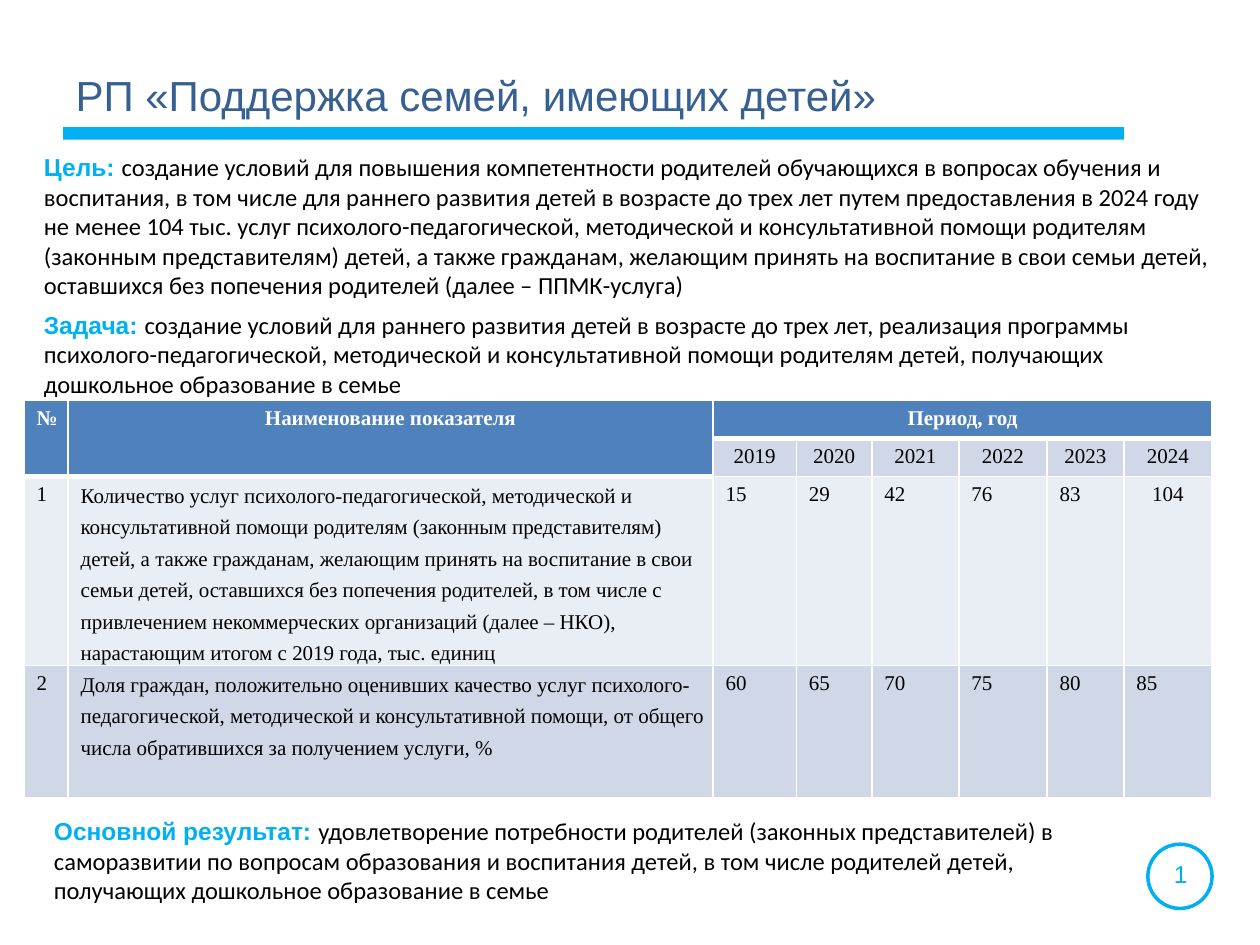
from collections import namedtuple
from dataclasses import dataclass

from pptx import Presentation
from pptx.dml.color import RGBColor as RGB
from pptx.enum.shapes import MSO_SHAPE as Shape
from pptx.enum.text import MSO_ANCHOR as Anchor, MSO_AUTO_SIZE as AutoSize, PP_ALIGN as Align
from pptx.oxml.ns import qn
from pptx.util import Pt
from lxml.etree import SubElement

PX = 9144  # 100 px to the inch
Box = namedtuple("Box", "x y w h")


@dataclass(frozen=True)
class Theme:
    accent: str = "00B0F0"
    title: str = "376092"
    text: str = "000000"
    white: str = "FFFFFF"
    header: str = "4F81BD"
    band_dark: str = "D0D8E8"
    band_light: str = "E9EDF4"
    sans: str = "Arial"
    body: str = "Calibri"
    serif: str = "Times New Roman"
    title_size: int = 24
    text_size: int = 14
    table_size: int = 12


THEME = Theme()

STATEMENTS = [
    (Box(25, 116, 945, 128), "Цель: ",
     "создание условий для повышения компетентности родителей обучающихся в вопросах обучения и "
     "воспитания, в том числе для раннего развития детей в возрасте до трех лет путем предоставления "
     "в 2024 году не менее 104 тыс. услуг психолого-педагогической, методической и консультативной "
     "помощи родителям (законным представителям) детей, а также гражданам, желающим принять на "
     "воспитание в свои семьи детей, оставшихся без попечения родителей (далее – ППМК-услуга)"),
    (Box(25, 241, 957, 81), "Задача: ",
     "создание условий для раннего развития детей в возрасте до трех лет, реализация программы "
     "психолого-педагогической, методической и консультативной помощи родителям детей, получающих "
     "дошкольное образование в семье"),
    (Box(33, 643, 863, 81), "Основной результат: ",
     "удовлетворение потребности родителей (законных представителей) в саморазвитии по вопросам "
     "образования и воспитания детей, в том числе родителей детей, получающих дошкольное "
     "образование в семье"),
]

COLUMNS = [35, 512, 66, 60, 69, 70, 61, 70]
ROWS = [29, 29, 144, 105]
INDICATORS = [
    ["№", "Наименование показателя", "Период, год", "", "", "", "", ""],
    ["", "", "2019", "2020", "2021", "2022", "2023", "2024"],
    ["1",
     "Количество услуг психолого-педагогической, методической и консультативной помощи родителям "
     "(законным представителям) детей, а также гражданам, желающим принять на воспитание в свои "
     "семьи детей, оставшихся без попечения родителей, в том числе с привлечением некоммерческих "
     "организаций (далее – НКО), нарастающим итогом с 2019 года, тыс. единиц",
     "15", "29", "42", "76", "83", "104"],
    ["2",
     "Доля граждан, положительно оценивших качество услуг психолого-педагогической, методической и "
     "консультативной помощи, от общего числа обратившихся за получением услуги, %",
     "60", "65", "70", "75", "80", "85"],
]


def emu(box):
    return [side * PX for side in box]


def set_font(font, name, size, color, bold=False):
    font.name, font.size, font.bold = name, Pt(size), bold
    font.color.rgb = RGB.from_string(color)


def add_title(slide, box, text):
    title = slide.shapes.title
    title.left, title.top, title.width, title.height = emu(box)
    frame = title.text_frame
    frame.auto_size = AutoSize.NONE
    frame.vertical_anchor = Anchor.MIDDLE
    frame.text = text
    heading = frame.paragraphs[0]
    heading.alignment = Align.LEFT
    set_font(heading.font, THEME.sans, THEME.title_size, THEME.title)


def add_rule(slide, box):
    rule = slide.shapes.add_shape(Shape.RECTANGLE, *emu(box))
    rule.shadow.inherit = False
    rule.fill.solid()
    rule.fill.fore_color.rgb = RGB.from_string(THEME.accent)
    rule.line.fill.background()


def add_page_badge(slide, box, number):
    ring = slide.shapes.add_shape(Shape.OVAL, *emu(box))
    ring.shadow.inherit = False
    ring.fill.background()
    ring.line.color.rgb = RGB.from_string(THEME.accent)
    ring.line.width = Pt(2)
    # The number's box is a little wider than the ring
    label = Box(box.x - 3, box.y + 7, box.w + 7, 34)
    frame = slide.shapes.add_textbox(*emu(label)).text_frame
    frame.word_wrap = True
    frame.text = number
    page = frame.paragraphs[0]
    page.alignment = Align.CENTER
    set_font(page.font, THEME.sans, THEME.text_size, THEME.accent)


def add_statement(slide, box, lead, text):
    frame = slide.shapes.add_textbox(*emu(box)).text_frame
    frame.word_wrap = True
    statement = frame.paragraphs[0]
    for words, name, color, bold in ((lead, THEME.sans, THEME.accent, True),
                                     (text, THEME.body, THEME.text, False)):
        run = statement.add_run()
        run.text = words
        set_font(run.font, name, THEME.text_size, color, bold)


def set_borders(cell, top, bottom):
    props = cell._tc.get_or_add_tcPr()
    for tag, points in (("a:lnL", 1), ("a:lnR", 1), ("a:lnT", top), ("a:lnB", bottom)):
        border = SubElement(props, qn(tag), w=str(Pt(points)))
        fill = SubElement(border, qn("a:solidFill"))
        SubElement(fill, qn("a:srgbClr"), val=THEME.white)


def style_cell(cell, text, row, col):
    header = row == 0 or (row == 1 and col < 2)
    below_header = (row == 1 and col >= 2) or (row == 2 and col < 2)
    set_borders(cell, 3 if below_header else 1, 3 if header else 1)
    cell.fill.solid()
    band = THEME.header if header else THEME.band_light if row == 2 else THEME.band_dark
    cell.fill.fore_color.rgb = RGB.from_string(band)

    cell.text = text
    entry = cell.text_frame.paragraphs[0]
    if row < 2 or text == "104":
        entry.alignment = Align.CENTER
    elif col == 1:
        cell.margin_left = cell.margin_right = 2 * PX
        cell.margin_top = cell.margin_bottom = 0
        entry.line_spacing = Pt(18)
        entry._p.get_or_add_pPr().set("marL", str(8 * PX))
    set_font(entry.font, THEME.serif, THEME.table_size,
             THEME.white if header else THEME.text, header)


def add_indicators(slide, box):
    table = slide.shapes.add_table(len(ROWS), len(COLUMNS), *emu(box)).table
    for column, width in zip(table.columns, COLUMNS):
        column.width = width * PX
    for line, height in zip(table.rows, ROWS):
        line.height = height * PX
    for row, texts in enumerate(INDICATORS):
        for col, text in enumerate(texts):
            style_cell(table.cell(row, col), text, row, col)
    # Header spans
    for col in (0, 1):
        table.cell(0, col).merge(table.cell(1, col))
    table.cell(0, 2).merge(table.cell(0, len(COLUMNS) - 1))


def main():
    deck = Presentation()
    deck.slide_width, deck.slide_height = 1000 * PX, 750 * PX
    slide = deck.slides.add_slide(deck.slide_layouts[5])
    add_rule(slide, Box(50, 101, 842, 10))
    add_page_badge(slide, Box(911, 670, 51, 51), "1")
    add_title(slide, Box(50, 43, 779, 64), "РП «Поддержка семей, имеющих детей»")
    add_indicators(slide, Box(19, 318, sum(COLUMNS), sum(ROWS)))
    for box, lead, text in STATEMENTS:
        add_statement(slide, box, lead, text)
    deck.save("out.pptx")


if __name__ == "__main__":
    main()
